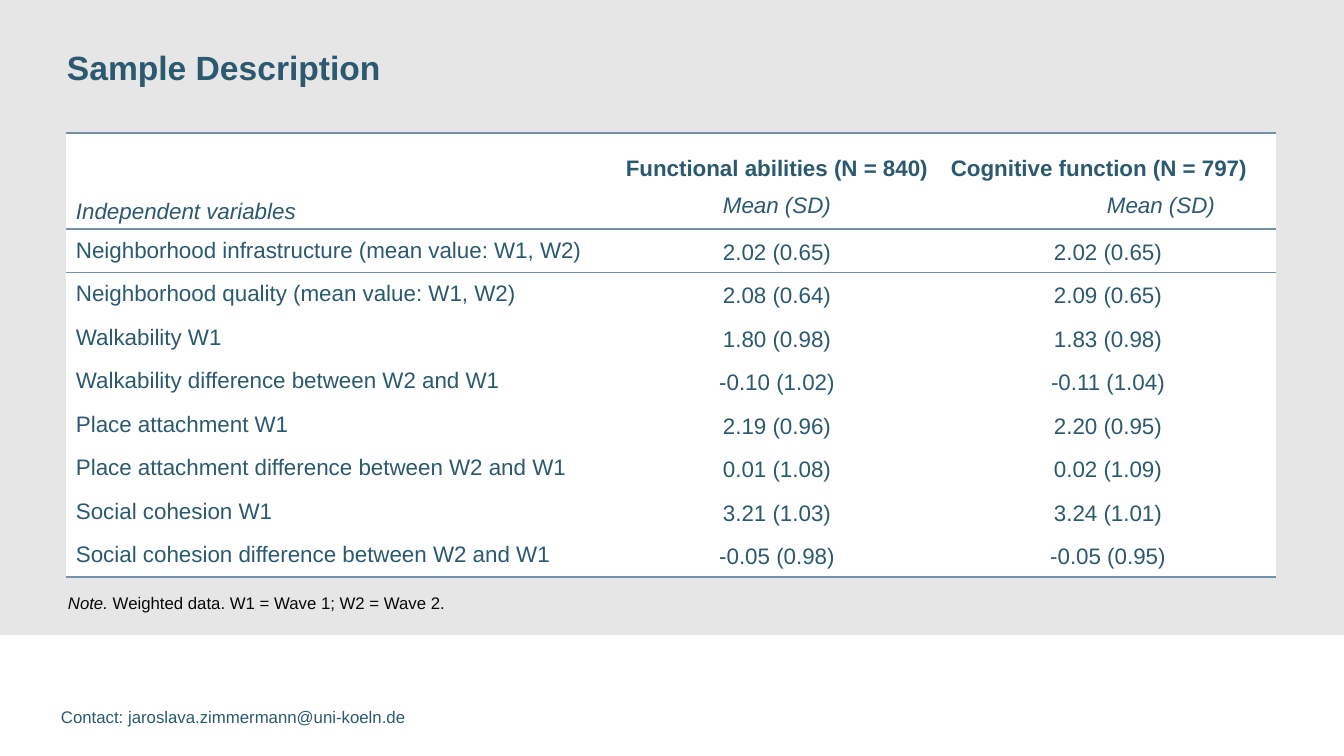
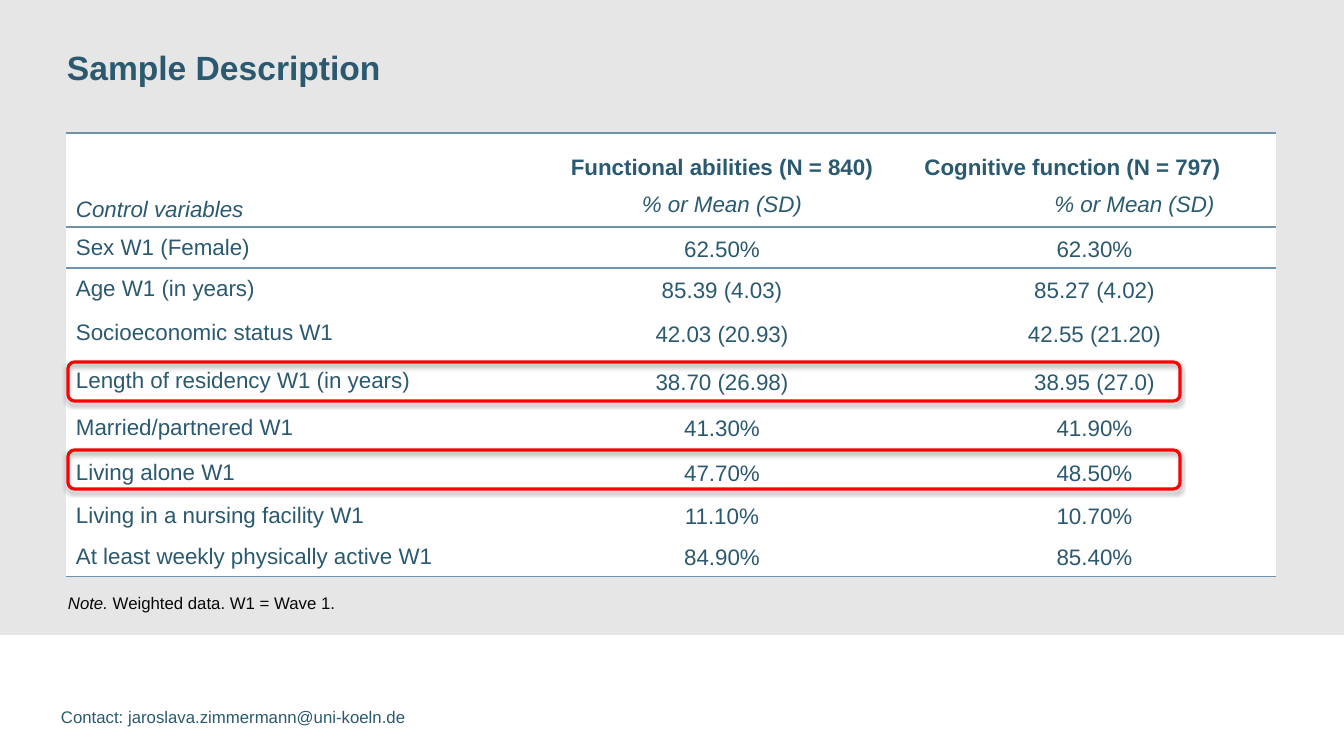
from lxml import etree
from pptx import Presentation
from pptx.dml.color import RGBColor
from pptx.enum.shapes import MSO_SHAPE
from pptx.enum.text import MSO_ANCHOR, PP_ALIGN
from pptx.oxml import parse_xml
from pptx.oxml.ns import nsdecls, qn
from pptx.util import Pt

RECT, ROUNDED = MSO_SHAPE.RECTANGLE, MSO_SHAPE.ROUNDED_RECTANGLE
LEFT, CENTER = PP_ALIGN.LEFT, PP_ALIGN.CENTER
TOP, MIDDLE, BOTTOM = MSO_ANCHOR.TOP, MSO_ANCHOR.MIDDLE, MSO_ANCHOR.BOTTOM

FONT = "Arial"
COLORS = {"text": "2B5A70", "band": "E6E6E6", "cell": "FFFFFF",
          "rule": "7093AB", "note": "080808", "highlight": "FF0000"}
PX = 914400 / 100.8
SLIDE_W, SLIDE_H, BAND_H = 1344, 756, 635
TABLE_X, TABLE_Y, TABLE_W, TABLE_H = 66, 133, 1210, 444
HIGHLIGHT_X, HIGHLIGHT_W, HIGHLIGHT_H = 68, 1112, 39
CELL_INSETS = (10, 5, 10, 5)
VALUE_INSETS = (5, 0, 5, 0)
LAST_MEASURE_INDENT = 124
NO_GRID_STYLE = "{2D5ABB26-0587-4C30-8999-92F81FD0307C}"

TITLE = "Sample Description"
CONTACT = "Contact: jaroslava.zimmermann@uni-koeln.de"
GROUPS = ("Functional abilities (N = 840)", "Cognitive function (N = 797)")
SLIDES = [
    {
        "variables": "Independent variables",
        "measure": "Mean (SD)",
        "rows": [
            ("Neighborhood infrastructure (mean value: W1, W2)", "2.02 (0.65)", "2.02 (0.65)"),
            ("Neighborhood quality (mean value: W1, W2)", "2.08 (0.64)", "2.09 (0.65)"),
            ("Walkability W1", "1.80 (0.98)", "1.83 (0.98)"),
            ("Walkability difference between W2 and W1", "-0.10 (1.02)", "-0.11 (1.04)"),
            ("Place attachment W1", "2.19 (0.96)", "2.20 (0.95)"),
            ("Place attachment difference between W2 and W1", "0.01 (1.08)", "0.02 (1.09)"),
            ("Social cohesion W1", "3.21 (1.03)", "3.24 (1.01)"),
            ("Social cohesion difference between W2 and W1", "-0.05 (0.98)", "-0.05 (0.95)"),
        ],
        "note": "Weighted data. W1 = Wave 1; W2 = Wave 2.",
        "column_widths": (548, 326, 336),
        "row_heights": [96] + [(TABLE_H - 96) / 8] * 8,
        "last_header_inset": 23,
        "highlight_tops": (),
    },
    {
        "variables": "Control variables",
        "measure": "% or Mean (SD)",
        "rows": [
            ("Sex W1 (Female)", "62.50%", "62.30%"),
            ("Age W1 (in years)", "85.39 (4.03)", "85.27 (4.02)"),
            ("Socioeconomic status W1", "42.03 (20.93)", "42.55 (21.20)"),
            ("Length of residency W1 (in years)", "38.70 (26.98)", "38.95 (27.0)"),
            ("Married/partnered W1", "41.30%", "41.90%"),
            ("Living alone W1", "47.70%", "48.50%"),
            ("Living in a nursing facility W1", "11.10%", "10.70%"),
            ("At least weekly physically active W1", "84.90%", "85.40%"),
        ],
        "note": "Weighted data. W1 = Wave 1.",
        "column_widths": (465, 382, 363),
        "row_heights": [94, 41, 41, 48, 48, 45, 45, 41, 41],
        "last_header_inset": 49,
        "highlight_tops": (362, 450),
    },
]


def emu(px):
    return round(px * PX)


def box(*lengths):
    return [emu(length) for length in lengths]


def rgb(name):
    return RGBColor.from_string(COLORS[name])


def write(frame, paragraphs, size=16, color="text", align=LEFT, spacing=1.0, indents=()):
    """Fill a frame; each paragraph is a list of (text, style) runs, style being "", "b" or "i"."""
    for index, runs in enumerate(paragraphs):
        paragraph = frame.paragraphs[0] if index == 0 else frame.add_paragraph()
        paragraph.alignment = align
        paragraph.line_spacing = spacing
        if index < len(indents) and indents[index]:
            properties = paragraph._p.get_or_add_pPr()
            properties.set("marL", str(emu(indents[index])))
            properties.set("indent", "0")
        for text, style in runs:
            run = paragraph.add_run()
            run.text = text
            run.font.name = FONT
            run.font.size = Pt(size)
            run.font.bold = style == "b"
            run.font.italic = style == "i"
            run.font.color.rgb = rgb(color)


def add_text(slide, place, runs, **text_format):
    frame = slide.shapes.add_textbox(*box(*place)).text_frame
    frame.word_wrap = True
    frame.margin_left = frame.margin_top = frame.margin_right = frame.margin_bottom = 0
    frame.vertical_anchor = TOP
    write(frame, [runs], **text_format)


def add_frame(slide, title):
    """Add the band, title and contact line that all slides share."""
    band = slide.shapes.add_shape(RECT, *box(0, 0, SLIDE_W, BAND_H))
    band.shadow.inherit = False
    band.fill.solid()
    band.fill.fore_color.rgb = rgb("band")
    band.line.fill.background()
    add_text(slide, (67, 51, 537, 36), [(title, "b")], size=24, spacing=Pt(26))
    add_text(slide, (61, 709, 353, 18), [(CONTACT, "")], size=12, spacing=Pt(13))


def set_rules(cell, *sides):
    properties = cell._tc.get_or_add_tcPr()
    for position, side in enumerate(sides):
        properties.insert(position, parse_xml(
            f'<a:{side} {nsdecls("a")} w="12700"><a:solidFill>'
            f'<a:srgbClr val="{COLORS["rule"]}"/></a:solidFill></a:{side}>'))


def fill_cell(cell, paragraphs, insets=CELL_INSETS, anchor=MIDDLE, rules=(), **text_format):
    cell.fill.solid()
    cell.fill.fore_color.rgb = rgb("cell")
    cell.margin_left, cell.margin_top, cell.margin_right, cell.margin_bottom = box(*insets)
    cell.vertical_anchor = anchor
    set_rules(cell, *rules)
    write(cell.text_frame, paragraphs, **text_format)


def add_sample_table(slide, sample):
    rows = sample["rows"]
    table = slide.shapes.add_table(
        len(rows) + 1, 3, *box(TABLE_X, TABLE_Y, TABLE_W, TABLE_H)).table
    table.first_row = table.horz_banding = False
    table._tbl.tblPr.find(qn("a:tableStyleId")).text = NO_GRID_STYLE
    for column, width in zip(table.columns, sample["column_widths"]):
        column.width = emu(width)
    for row, height in zip(table.rows, sample["row_heights"]):
        row.height = emu(height)

    header = {"rules": ("lnT", "lnB"), "spacing": 1.5}
    fill_cell(table.cell(0, 0), [[(sample["variables"], "i")]], anchor=BOTTOM, **header)
    header_layouts = ((CELL_INSETS, 0),
                      ((5, 5, sample["last_header_inset"], 5), LAST_MEASURE_INDENT))
    for column, (group, (insets, indent)) in enumerate(zip(GROUPS, header_layouts), 1):
        fill_cell(table.cell(0, column), [[(group, "b")], [(sample["measure"], "i")]],
                  insets=insets, align=CENTER, indents=(0, indent), **header)

    for number, (label, *values) in enumerate(rows, 1):
        rules = (("lnT",) if number == 1 else ()) + (("lnB",) if number == len(rows) else ())
        fill_cell(table.cell(number, 0), [[(label, "")]], rules=rules)
        for column, value in enumerate(values, 1):
            fill_cell(table.cell(number, column), [[(value, "")]], insets=VALUE_INSETS,
                      rules=rules, align=CENTER, spacing=1.15)


def add_highlight(slide, top):
    highlight = slide.shapes.add_shape(
        ROUNDED, *box(HIGHLIGHT_X, top, HIGHLIGHT_W, HIGHLIGHT_H))
    highlight.fill.background()
    highlight.line.color.rgb = rgb("highlight")
    highlight.line.width = Pt(2.25)
    highlight.shadow.inherit = False
    effects = highlight._element.spPr.find(qn("a:effectLst"))
    shadow = etree.SubElement(effects, qn("a:outerShdw"), blurRad="40000", dist="23000",
                              dir="5400000", rotWithShape="0")
    black = etree.SubElement(shadow, qn("a:srgbClr"), val="000000")
    etree.SubElement(black, qn("a:alpha"), val="35000")


def main():
    presentation = Presentation()
    presentation.slide_width, presentation.slide_height = box(SLIDE_W, SLIDE_H)
    for sample in SLIDES:
        slide = presentation.slides.add_slide(presentation.slide_layouts[6])
        add_frame(slide, TITLE)
        add_sample_table(slide, sample)
        add_text(slide, (68, 577, 492, 31), [("Note. ", "i"), (sample["note"], "")],
                 size=12, color="note", spacing=Pt(26))
        for top in sample["highlight_tops"]:
            add_highlight(slide, top)
    presentation.save("out.pptx")


if __name__ == "__main__":
    main()
